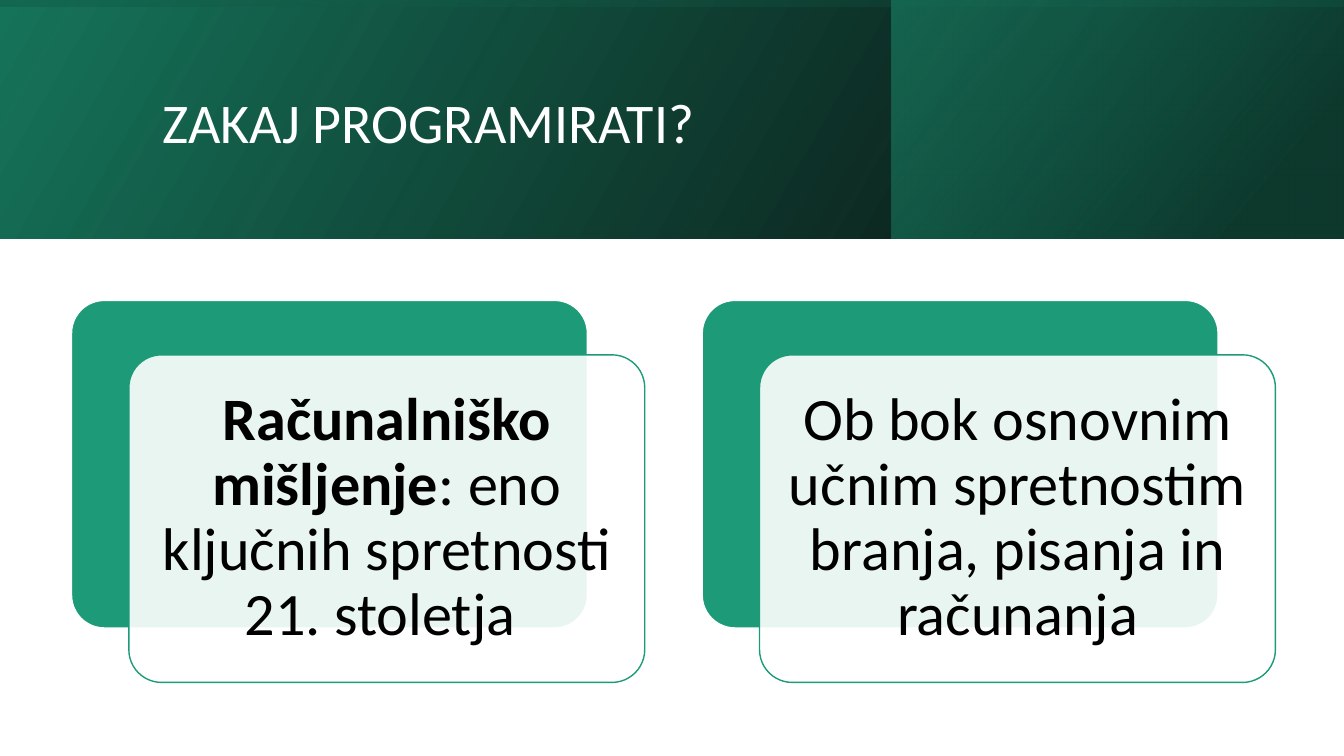
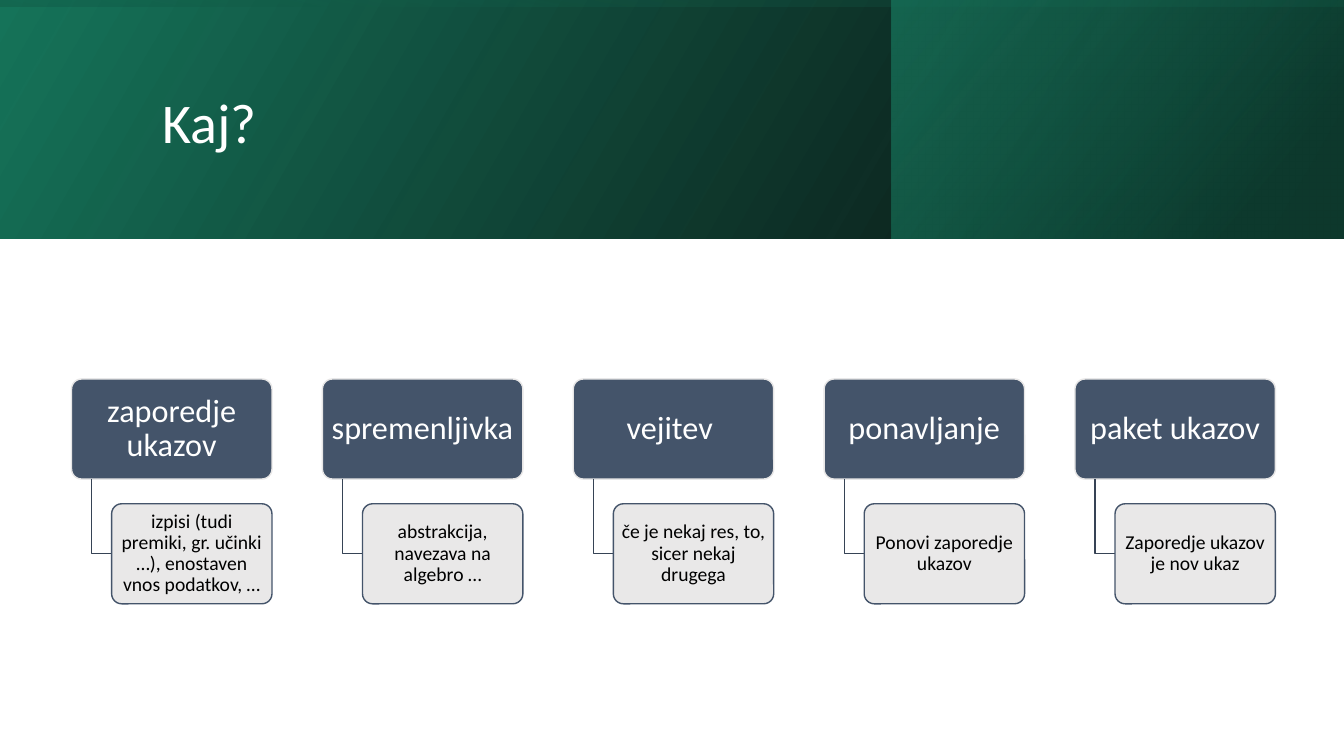
import lxml.etree
import pptx
import pptx.dml.color
import pptx.enum.shapes
import pptx.enum.text
import pptx.oxml.ns
import pptx.util

WIDTH, HEIGHT = 13.33, 7.5
BAND_HEIGHT = 2.37
FONT = "Calibri"
WHITE, BLACK = "FFFFFF", "000000"
GREEN, DEEP_GREEN, DARK_GREEN = "1D9A78", "16745A", "0E4D3C"
SLATE, DARK_SLATE, PALE = "44546A", "364355", "E7E6E6"

REASONS = [
    [("Računalniško mišljenje", True), (": eno ključnih spretnosti 21. stoletja ", False)],
    [("Ob bok osnovnim učnim spretnostim branja, pisanja in računanja", False)],
]
CONCEPTS = [
    ("zaporedje ukazov", "izpisi (tudi premiki, gr. učinki …), enostaven vnos podatkov, …"),
    ("spremenljivka", "abstrakcija, navezava na algebro …"),
    ("vejitev ", "če je nekaj res, to, sicer nekaj drugega"),
    ("ponavljanje", "Ponovi zaporedje ukazov"),
    ("paket ukazov", "Zaporedje ukazov je nov ukaz"),
]


def color(value):
    """Turn a hex string into a colour."""
    return pptx.dml.color.RGBColor.from_string(value)


def inches(*lengths):
    """Turn lengths in inches into a list of slide units."""
    return [pptx.util.Inches(length) for length in lengths]


def within(box, left, top, width, height):
    """Return the part of a box that is given as shares of its size."""
    x, y, full_width, full_height = box
    return (x + left * full_width, y + top * full_height,
            width * full_width, height * full_height)


def columns(box, count, gap):
    """Split a box into equal columns with a gap between them."""
    left, top, width, height = box
    column = (width - gap * (count - 1)) / count
    return [(left + index * (column + gap), top, column, height) for index in range(count)]


def write_text(shape, text, size, font_color, insets, centered=True):
    """Write one paragraph from a string or from (text, bold) pairs."""
    frame = shape.text_frame
    frame.word_wrap = True
    frame.vertical_anchor = pptx.enum.text.MSO_ANCHOR.MIDDLE
    horizontal, vertical = inches(*insets)
    frame.margin_left = frame.margin_right = horizontal
    frame.margin_top = frame.margin_bottom = vertical
    paragraph = frame.paragraphs[0]
    alignment = pptx.enum.text.PP_ALIGN
    paragraph.alignment = alignment.CENTER if centered else alignment.LEFT
    paragraph.line_spacing = 0.9
    for words, bold in [(text, False)] if isinstance(text, str) else text:
        run = paragraph.add_run()
        run.text = words
        run.font.name = FONT
        run.font.size = pptx.util.Pt(size)
        run.font.bold = bold
        run.font.color.rgb = color(font_color)


def add_rounded(slide, box, fill, line, opacity=100):
    """Add a rounded rectangle, optionally see-through."""
    kind = pptx.enum.shapes.MSO_SHAPE.ROUNDED_RECTANGLE
    shape = slide.shapes.add_shape(kind, *inches(*box))
    shape.shadow.inherit = False
    shape.adjustments[0] = 0.1
    shape.fill.solid()
    shape.fill.fore_color.rgb = color(fill)
    shape.line.color.rgb = color(line)
    shape.line.width = pptx.util.Pt(1)
    if opacity < 100:
        solid = shape.element.spPr.find(pptx.oxml.ns.qn("a:solidFill"))
        alpha = lxml.etree.SubElement(solid[0], pptx.oxml.ns.qn("a:alpha"))
        alpha.set("val", str(opacity * 1000))
    return shape


def add_gradient(slide, box, stops, angle, rotation=0):
    """Add a mirrored rectangle with (position, colour, opacity) gradient stops."""
    qn = pptx.oxml.ns.qn
    shape = slide.shapes.add_shape(pptx.enum.shapes.MSO_SHAPE.RECTANGLE, *inches(*box))
    shape.shadow.inherit = False
    shape.line.fill.background()
    shape.rotation = rotation
    shape.element.spPr.find(qn("a:xfrm")).set("flipH", "1")
    shape.fill.gradient()
    gradient = shape.element.spPr.find(qn("a:gradFill"))
    for child in list(gradient):
        gradient.remove(child)
    stop_list = lxml.etree.SubElement(gradient, qn("a:gsLst"))
    for position, value, opacity in stops:
        stop = lxml.etree.SubElement(stop_list, qn("a:gs"), pos=str(position * 1000))
        tint = lxml.etree.SubElement(stop, qn("a:srgbClr"), val=value)
        if opacity < 100:
            lxml.etree.SubElement(tint, qn("a:alpha"), val=str(opacity * 1000))
    lxml.etree.SubElement(gradient, qn("a:lin"), ang=str(angle * 60000), scaled="0")


def add_header(slide, title, box):
    """Draw the layered green band with the slide title."""
    left, top, width, height = box
    shift = (width - height) / 2
    upright = (left + shift, top - shift, height, width)
    add_gradient(slide, box, [(0, BLACK, 96), (100, DEEP_GREEN, 100)], 330)
    add_gradient(slide, within(box, 0.6632, 0, 0.3363, 1),
                 [(19, DARK_GREEN, 68), (100, GREEN, 48)], 320)
    add_gradient(slide, upright, [(23, DEEP_GREEN, 16), (99, BLACK, 45)], 350, rotation=270)
    title_box = within(box, 0.1133, 0.16, 0.7975, 0.7257)
    shape = slide.shapes.add_textbox(*inches(*title_box))
    write_text(shape, title, 40, WHITE, (0.1, 0.05), centered=False)


def add_card(slide, text, box):
    """Draw a green card with a white sheet shifted over it."""
    share_x, share_y = 0.9, 0.8575
    add_rounded(slide, within(box, 0, 0, share_x, share_y), GREEN, WHITE)
    sheet_box = within(box, 1 - share_x, 1 - share_y, share_x, share_y)
    sheet = add_rounded(slide, sheet_box, WHITE, GREEN, opacity=90)
    write_text(sheet, text, 43, BLACK, (0.18, 0.18))


def add_concept(slide, name, detail, box):
    """Draw a concept box with its detail box hanging from an elbow."""
    row = 0.445
    elbow_left, elbow_top, elbow_width, elbow_height = within(box, 0.1, row, 0.1, 1 - 1.5 * row)
    head = add_rounded(slide, within(box, 0, 0, 1, row), SLATE, PALE)
    write_text(head, name, 23, WHITE, (0.05, 0.03))
    x, y, right, bottom = inches(elbow_left, elbow_top, elbow_left + elbow_width,
                                 elbow_top + elbow_height)
    builder = slide.shapes.build_freeform(x, y)
    builder.add_line_segments([(x, bottom), (right, bottom)], close=False)
    elbow = builder.convert_to_shape()
    elbow.shadow.inherit = False
    elbow.fill.background()
    elbow.line.color.rgb = color(DARK_SLATE)
    elbow.line.width = pptx.util.Pt(1)
    body = add_rounded(slide, within(box, 0.2, 1 - row, 0.8, row), PALE, SLATE, opacity=90)
    write_text(body, detail, 14, BLACK, (0.03, 0.02))


def add_slide(presentation, title):
    """Add a blank slide with the shared header."""
    slide = presentation.slides.add_slide(presentation.slide_layouts[6])
    add_header(slide, title, (0, 0, WIDTH, BAND_HEIGHT))
    return slide


def add_reasons_slide(presentation):
    """Build the slide with two cards side by side."""
    slide = add_slide(presentation, "ZAKAJ PROGRAMIRATI?")
    boxes = columns((0.71, 2.98, 11.94, 3.79), len(REASONS), 0.57)
    for text, box in zip(REASONS, boxes):
        add_card(slide, text, box)


def add_concepts_slide(presentation):
    """Build the slide with a row of concepts and details."""
    slide = add_slide(presentation, "Kaj?")
    boxes = columns((0.71, 3.76, 11.94, 2.23), len(CONCEPTS), 0.5)
    for (name, detail), box in zip(CONCEPTS, boxes):
        add_concept(slide, name, detail, box)


def main():
    """Build and save the presentation."""
    presentation = pptx.Presentation()
    presentation.slide_width, presentation.slide_height = inches(WIDTH, HEIGHT)
    add_reasons_slide(presentation)
    add_concepts_slide(presentation)
    presentation.save("out.pptx")


if __name__ == "__main__":
    main()
